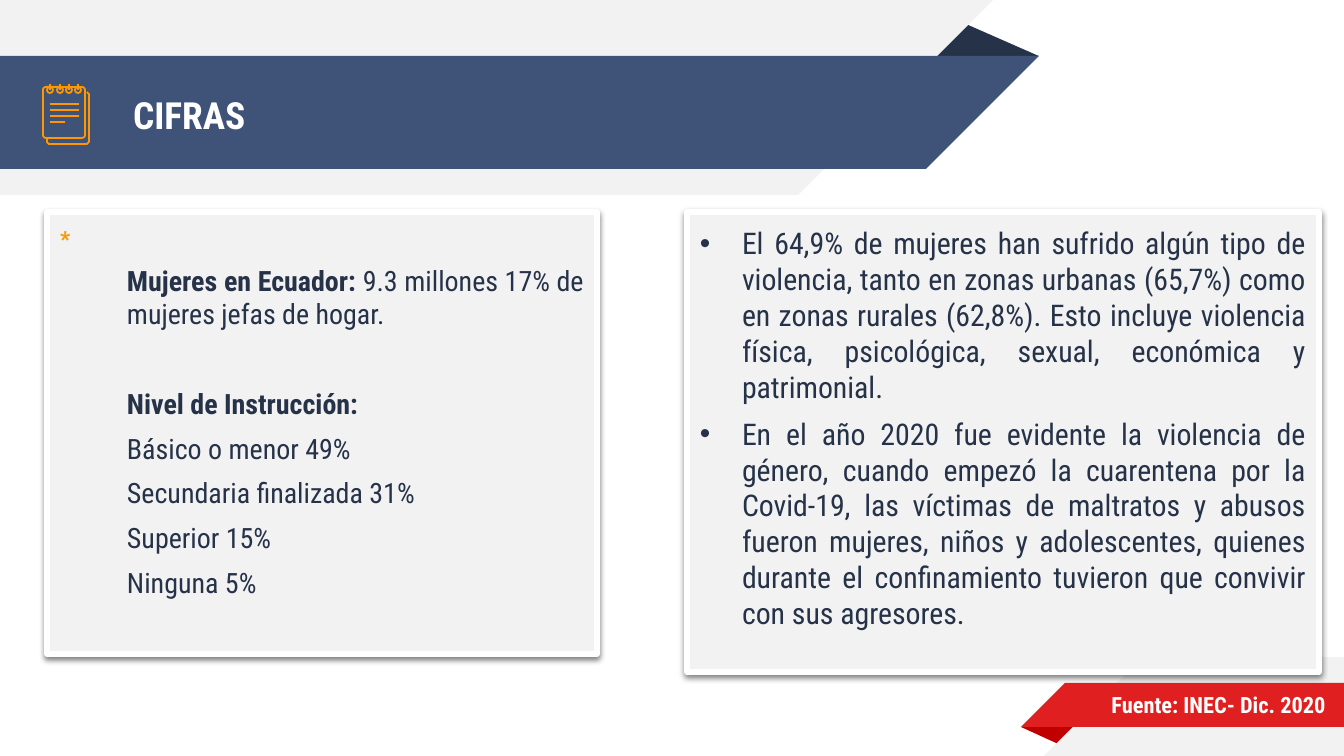
from lxml.etree import SubElement
from pptx import Presentation
from pptx.dml.color import RGBColor
from pptx.enum.shapes import MSO_CONNECTOR, MSO_SHAPE
from pptx.enum.text import MSO_ANCHOR, MSO_AUTO_SIZE, PP_ALIGN
from pptx.oxml.ns import qn
from pptx.util import Emu, Pt

PX = 914400 / 134.4
FONT = "Roboto Condensed"
NAVY = RGBColor(0x26, 0x32, 0x48)
BLUE = RGBColor(0x3F, 0x53, 0x78)
GREY = RGBColor(0xF2, 0xF2, 0xF2)
RED = RGBColor(0xE0, 0x20, 0x20)
DARK_RED = RGBColor(0xC0, 0x00, 0x00)
ORANGE = RGBColor(0xFF, 0x98, 0x00)
WHITE = RGBColor(0xFF, 0xFF, 0xFF)

VIOLENCE = [
    "El 64,9% de mujeres han sufrido algún tipo de violencia, tanto en zonas urbanas (65,7%) "
    "como en zonas rurales (62,8%). Esto incluye violencia física, psicológica, sexual, "
    "económica y patrimonial.",
    "En el año 2020 fue evidente la violencia de género, cuando empezó la cuarentena por la "
    "Covid-19, las víctimas de maltratos y abusos fueron mujeres, niños y adolescentes, quienes "
    "durante el confinamiento tuvieron que convivir con sus agresores.",
]
EDUCATION = ["Básico o menor 49%", "Secundaria finalizada 31%", "Superior 15%", "Ninguna 5%"]


def px(length):
    return Emu(round(length * PX))


def place(shape, box):
    for name, length in zip(("left", "top", "width", "height"), box):
        setattr(shape, name, px(length))


def add_solid(group, kind, box, color, rotation=0):
    shape = group.shapes.add_shape(kind, *map(px, box))
    shape.shadow.inherit = False
    shape.fill.solid()
    shape.fill.fore_color.rgb = color
    shape.line.fill.background()
    shape.rotation = rotation
    return shape


def add_fold(group, box, color, rotation=0):
    fold = add_solid(group, MSO_SHAPE.ISOSCELES_TRIANGLE, box, color, rotation)
    fold.adjustments[0] = 0.32


def add_header(page, box):
    left, top, width, height = box
    group = page.shapes.add_group_shape()
    add_fold(group, (left + 925, top + 22, 114, 34), NAVY)
    for offset, band, color in ((0, height, GREY), (56, 113, BLUE)):
        straight = width - 195 if color == GREY else 926
        add_solid(group, MSO_SHAPE.RECTANGLE, (left, top + offset, straight, band), color)
        add_solid(group, MSO_SHAPE.RIGHT_TRIANGLE,
                  (left + straight, top + offset, band, band), color, 90)


def add_footer(page, box):
    left, top, width, height = box
    group = page.shapes.add_group_shape()
    add_fold(group, (left, top + 70, 58, 18), DARK_RED, 180)
    for start, offset, band, color in ((23, 0, height, GREY), (0, 26, 44, RED)):
        add_solid(group, MSO_SHAPE.RECTANGLE,
                  (left + start + band, top + offset, width - start - band, band), color)
        add_solid(group, MSO_SHAPE.RIGHT_TRIANGLE,
                  (left + start, top + offset, band, band), color, 270)


def outline(shape):
    shape.line.color.rgb = ORANGE
    shape.line.width = Pt(0.96)


def add_stroke(group, start_x, start_y, end_x, end_y):
    stroke = group.shapes.add_connector(
        MSO_CONNECTOR.STRAIGHT, px(start_x), px(start_y), px(end_x), px(end_y))
    outline(stroke)
    SubElement(stroke.element.spPr, qn("a:effectLst"))


def add_notebook(page, box):
    left, top, width, height = box
    group = page.shapes.add_group_shape()
    builder = group.shapes.build_freeform(4, height - 5, scale=PX)
    builder.add_line_segments(
        [(4, height - 2), (6, height), (width - 2, height), (width, height - 2),
         (width, 10), (width - 2, 8)], close=False)
    back = builder.convert_to_shape(px(left), px(top))
    front = group.shapes.add_shape(
        MSO_SHAPE.ROUNDED_RECTANGLE, px(left), px(top + 3), px(42), px(51))
    front.adjustments[0] = 0.07
    rings = []
    for step in range(4):
        center = left + 7 + round(step * 9.5)
        rings.append(group.shapes.add_shape(
            MSO_SHAPE.OVAL, px(center - 3), px(top + 3), px(6), px(6)))
        add_stroke(group, center, top, center, top + 6)
    for shape in (back, front, *rings):
        shape.shadow.inherit = False
        shape.fill.background()
        outline(shape)
    for offset, length in ((20, 29), (26, 29), (32, 29), (38, 15)):
        add_stroke(group, left + 7, top + offset, left + 7 + length, top + offset)


def prepare_frame(shape, anchor):
    frame = shape.text_frame
    settings = {"word_wrap": True, "auto_size": MSO_AUTO_SIZE.NONE, "vertical_anchor": anchor}
    settings.update({f"margin_{side}": px(13) for side in ("left", "top", "right", "bottom")})
    for name, value in settings.items():
        setattr(frame, name, value)
    return frame


def write_para(para, spans, align, before=0, margin=0, bullet=None):
    settings = {"alignment": align, "space_before": Pt(before),
                "space_after": Pt(0), "line_spacing": 1.0}
    for name, value in settings.items():
        setattr(para, name, value)
    for text, size, bold, color in spans:
        span = para.add_run()
        span.text = text
        for name, value in {"name": FONT, "size": Pt(size), "bold": bold}.items():
            setattr(span.font, name, value)
        span.font.color.rgb = color
    properties = para._p.get_or_add_pPr()
    properties.set("marL", str(px(margin)))
    properties.set("indent", str(-px(margin) if bullet else 0))
    if bullet:
        tint = SubElement(properties, qn("a:buClr"))
        SubElement(tint, qn("a:srgbClr"), val=str(NAVY))
        SubElement(properties, qn("a:buFont"), typeface="Arial")
        SubElement(properties, qn("a:buChar"), char=bullet)
    else:
        SubElement(properties, qn("a:buNone"))


def bring_to_front(shape):
    shape.element.getparent().append(shape.element)


def fill_title(title, box):
    place(title, box)
    bring_to_front(title)
    frame = prepare_frame(title, MSO_ANCHOR.MIDDLE)
    write_para(frame.paragraphs[0], [("CIFRAS", 20, True, WHITE)], PP_ALIGN.LEFT)


def fill_card(card, box, paras):
    place(card, box)
    bring_to_front(card)
    card.fill.solid()
    card.fill.fore_color.rgb = GREY
    card.line.color.rgb = WHITE
    card.line.width = Pt(3)
    card.shadow.inherit = False
    effects = card.element.spPr.find(qn("a:effectLst"))
    shadow = SubElement(effects, qn("a:outerShdw"), blurRad="38100", dist="19050",
                        dir="5400000", algn="t", rotWithShape="0")
    tint = SubElement(shadow, qn("a:srgbClr"), val="000000")
    SubElement(tint, qn("a:alpha"), val="50000")
    frame = prepare_frame(card, MSO_ANCHOR.TOP)
    for index, settings in enumerate(paras):
        para = frame.add_paragraph() if index else frame.paragraphs[0]
        write_para(para, **settings)


def add_source_note(page, box):
    note = page.shapes.add_textbox(*map(px, box))
    frame = prepare_frame(note, MSO_ANCHOR.MIDDLE)
    write_para(frame.paragraphs[0], [("Fuente: INEC- Dic. 2020", 12, True, WHITE)],
               PP_ALIGN.RIGHT)


def main():
    deck = Presentation()
    deck.slide_width, deck.slide_height = px(1344), px(756)
    page = deck.slides.add_slide(deck.slide_layouts[3])
    title, left_card, right_card = page.placeholders

    add_header(page, (0, 0, 993, 195))
    add_footer(page, (1021, 657, 323, 99))
    fill_title(title, (120, 58, 773, 113))

    justified = {"align": PP_ALIGN.JUSTIFY, "before": 6}
    fill_card(right_card, (687, 212, 632, 460), [
        {"spans": [(text, 16, False, NAVY)], "margin": 42, "bullet": "•", **justified}
        for text in VIOLENCE])
    add_source_note(page, (1058, 681, 281, 47))

    indented = {**justified, "margin": 67}
    facts = [
        {"spans": [("*", 12, True, ORANGE)], "align": PP_ALIGN.LEFT, "before": 6},
        {"spans": [("Mujeres en Ecuador: ", 15, True, NAVY),
                   ("9.3 millones 17% de mujeres jefas de hogar.", 15, False, NAVY)], **indented},
        {"spans": [("Nivel de Instrucción:", 15, True, NAVY)], **indented, "before": 30},
    ]
    facts += [{"spans": [(text, 15, False, NAVY)], **indented} for text in EDUCATION]
    fill_card(left_card, (47, 212, 550, 442), facts)
    add_notebook(page, (43, 84, 46, 60))
    deck.save("out.pptx")


if __name__ == "__main__":
    main()
